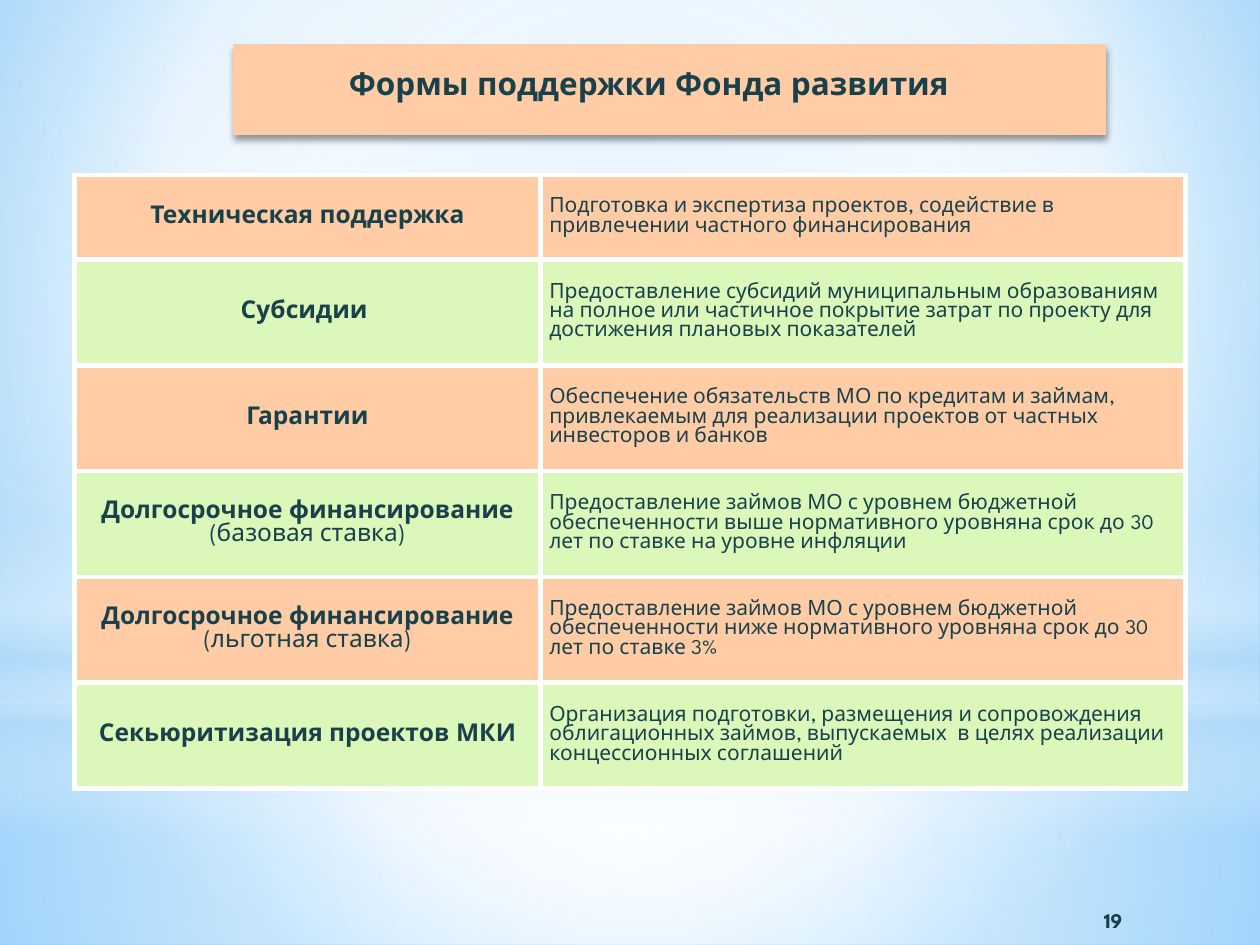
from dataclasses import dataclass

from lxml.etree import SubElement
from pptx import Presentation
from pptx.dml.color import RGBColor
from pptx.enum.shapes import MSO_SHAPE
from pptx.enum.text import MSO_ANCHOR, MSO_AUTO_SIZE, PP_ALIGN
from pptx.oxml.ns import qn
from pptx.util import Inches, Pt


@dataclass(frozen=True)
class Theme:
    font: str = "League Spartan"
    ink: str = "18414C"
    peach: str = "FFCCA6"
    green: str = "DCF7BA"
    white: str = "FFFFFF"
    haze: str = "B4DCFA"
    sky: str = "9ED5FF"
    deep_sky: str = "5BB9FF"
    shadow: str = "000000"
    title_size: int = 18
    label_size: int = 14
    body_size: int = 12
    border: int = 3


THEME = Theme()
CENTRE = (50, 50, 50, 50)

# Label, bracketed note under the label, description
SUPPORT_FORMS = [
    ("Техническая поддержка", "",
     "Подготовка и экспертиза проектов, содействие в привлечении частного финансирования"),
    ("Субсидии ", "",
     "Предоставление субсидий муниципальным образованиям на полное или частичное "
     "покрытие затрат по проекту для достижения плановых показателей"),
    ("Гарантии", "",
     "Обеспечение обязательств МО по кредитам и займам, привлекаемым для реализации "
     "проектов от частных инвесторов и банков"),
    ("Долгосрочное финансирование ", "(базовая ставка)",
     "Предоставление займов МО с уровнем бюджетной обеспеченности выше нормативного "
     "уровняна срок до 30 лет по ставке на уровне инфляции"),
    ("Долгосрочное финансирование ", "(льготная ставка)",
     "Предоставление займов МО с уровнем бюджетной обеспеченности ниже нормативного "
     "уровняна срок до 30 лет по ставке 3%"),
    ("Секьюритизация проектов МКИ", "",
     "Организация подготовки, размещения и сопровождения облигационных займов, "
     "выпускаемых  в целях реализации концессионных соглашений"),
]


def add_color(parent, color, alpha=100):
    clr = SubElement(parent, qn("a:srgbClr"), val=color)
    if alpha < 100:
        SubElement(clr, qn("a:alpha"), val=str(alpha * 1000))


def set_gradient(fill, owner, stops, focus=None):
    """Fill with (position, color, opacity) stops: radial if focus is given, else downwards."""
    fill.solid()
    solid = owner.find(qn("a:solidFill"))
    grad = owner.makeelement(qn("a:gradFill"), {"rotWithShape": "1"})
    owner.replace(solid, grad)
    gs_list = SubElement(grad, qn("a:gsLst"))
    for pos, color, alpha in stops:
        add_color(SubElement(gs_list, qn("a:gs"), pos=str(pos * 1000)), color, alpha)
    if focus:
        radial = SubElement(grad, qn("a:path"), {"path": "circle"})
        sides = {side: str(v * 1000) for side, v in zip("ltrb", focus)}
        SubElement(radial, qn("a:fillToRect"), sides)
    else:
        SubElement(grad, qn("a:lin"), ang="5400000", scaled="0")


def add_shape(s, kind, x, y, w, h):
    sp = s.shapes.add_shape(kind, Inches(x), Inches(y), Inches(w), Inches(h))
    sp.shadow.inherit = False
    sp.line.fill.background()
    return sp


def add_glow(s, kind, box, stops, focus=None):
    sp = add_shape(s, kind, *box)
    set_gradient(sp.fill, sp.element.spPr, stops, focus)


def add_backdrop(s):
    w, haze = THEME.white, THEME.haze
    fill = s.background.fill
    set_gradient(fill, s.element.find(".//" + qn("p:bgPr")),
                 [(0, THEME.sky, 100), (60, w, 100), (100, THEME.deep_sky, 100)],
                 (20, 10, 20, 60))
    rect = MSO_SHAPE.RECTANGLE
    add_glow(s, rect, (0, 5.58, 10, 1.92),
             [(0, w, 91), (37, w, 76), (100, haze, 79)], CENTRE)
    add_glow(s, rect, (0, 0, 10, 5.58),
             [(0, w, 89), (48, w, 62), (100, haze, 79)], CENTRE)
    add_glow(s, rect, (0, 4.12, 10, 2.5),
             [(0, w, 0), (29, w, 30), (45, haze, 40), (55, w, 26), (65, haze, 60), (100, w, 0)])
    add_glow(s, MSO_SHAPE.OVAL, (0, 1.75, 10, 5.58), [(0, w, 100), (56, w, 0)], CENTRE)


def add_title_plate(s):
    sp = add_shape(s, MSO_SHAPE.RECTANGLE, 1.85, 0.35, 6.93, 0.72)
    sp.fill.solid()
    sp.fill.fore_color.rgb = RGBColor.from_string(THEME.peach)
    effects = sp.element.spPr.find(qn("a:effectLst"))
    shadow = SubElement(effects, qn("a:outerShdw"), blurRad=str(Pt(4)), dist=str(Pt(3)),
                        dir="5400000", rotWithShape="0")
    add_color(shadow, THEME.shadow, 40)


def write(tf, text, size, bold=False, align=PP_ALIGN.LEFT, note=""):
    """Write one paragraph; the note follows the text in regular weight."""
    p = tf.paragraphs[0]
    p.alignment = align
    p.font.name = THEME.font
    p.font.size = Pt(size)
    p.font.color.rgb = RGBColor.from_string(THEME.ink)
    for part, weight in ((text, bold), (note, False)):
        if part:
            r = p.add_run()
            r.text = part
            r.font.bold = weight


def add_text(s, box, text, size, anchor=MSO_ANCHOR.TOP):
    tf = s.shapes.add_textbox(*map(Inches, box)).text_frame
    tf.word_wrap = True
    tf.vertical_anchor = anchor
    write(tf, text, size, True, PP_ALIGN.CENTER)
    return tf


def style_cell(cell, color):
    cell.vertical_anchor = MSO_ANCHOR.MIDDLE
    cell.margin_left = cell.margin_right = Inches(0.07)
    cell.margin_top = cell.margin_bottom = 0
    tc_pr = cell._tc.get_or_add_tcPr()
    for side in ("lnL", "lnR", "lnT", "lnB"):
        ln = SubElement(tc_pr, qn(f"a:{side}"), w=str(Pt(THEME.border)))
        add_color(SubElement(ln, qn("a:solidFill")), THEME.white)
    cell.fill.solid()
    cell.fill.fore_color.rgb = RGBColor.from_string(color)


def add_support_table(s):
    widths = (3.7, 5.12)
    heights = [0.67] + [0.84] * (len(SUPPORT_FORMS) - 1)
    table = s.shapes.add_table(len(heights), len(widths), Inches(0.59), Inches(1.39),
                               Inches(sum(widths)), Inches(sum(heights))).table
    table.first_row = table.horz_banding = False
    for column, width in zip(table.columns, widths):
        column.width = Inches(width)
    for i, (label, note, description) in enumerate(SUPPORT_FORMS):
        row = table.rows[i]
        row.height = Inches(heights[i])
        for cell in row.cells:
            style_cell(cell, THEME.green if i % 2 else THEME.peach)
        name_cell, text_cell = row.cells
        write(name_cell.text_frame, label, THEME.label_size, True, PP_ALIGN.CENTER, note)
        write(text_cell.text_frame, description, THEME.body_size)


def main():
    prs = Presentation()
    prs.slide_width, prs.slide_height = Inches(10), Inches(7.5)
    s = prs.slides.add_slide(prs.slide_layouts[6])
    add_backdrop(s)
    add_title_plate(s)
    title = add_text(s, (2.63, 0.46, 5.04, 0.4), "Формы поддержки Фонда развития",
                     THEME.title_size)
    title.auto_size = MSO_AUTO_SIZE.SHAPE_TO_FIT_TEXT
    add_support_table(s)
    add_text(s, (7.67, 7.1, 2.33, 0.4), "19", THEME.body_size, MSO_ANCHOR.MIDDLE)
    prs.save("out.pptx")


if __name__ == "__main__":
    main()
